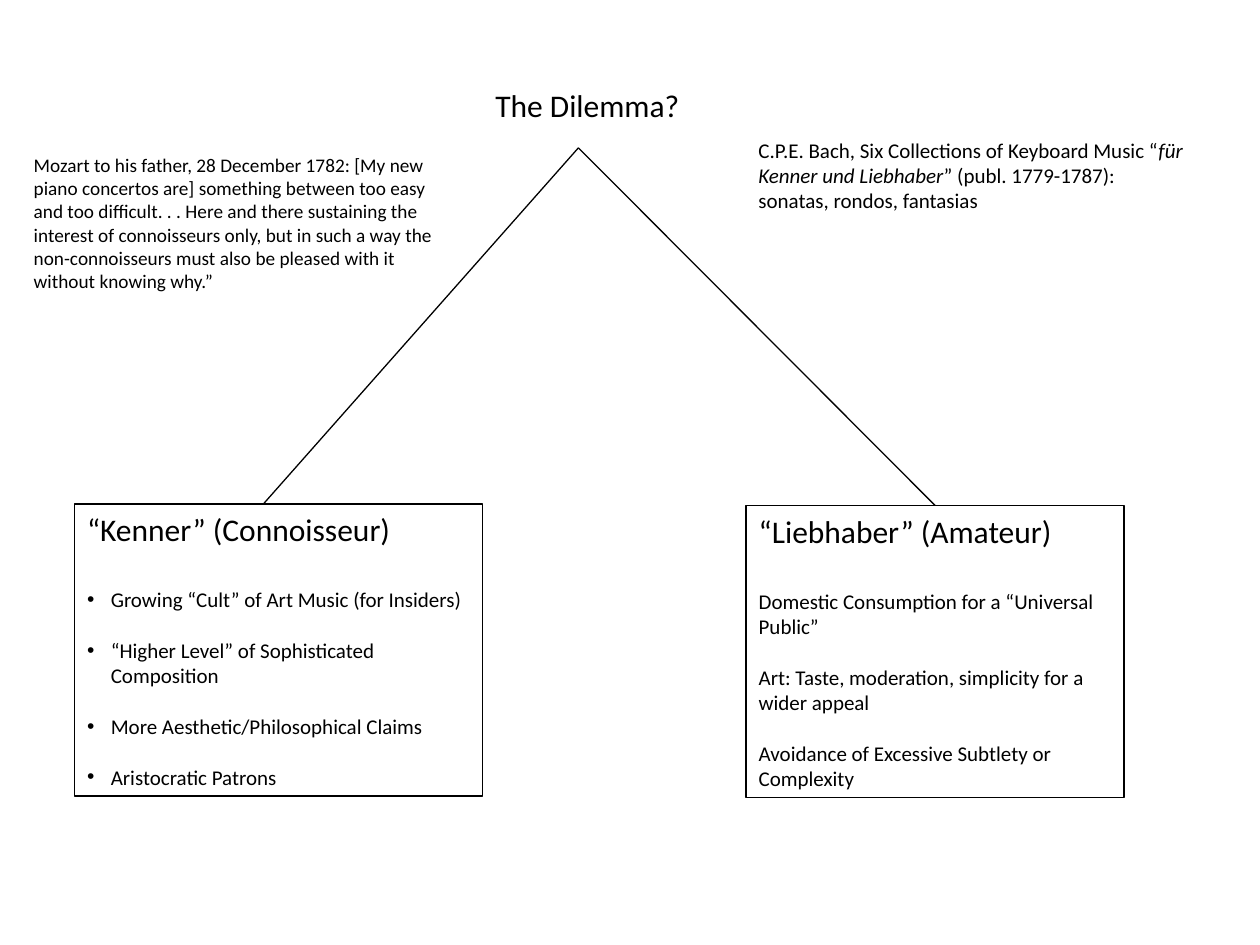
import pptx
import pptx.util
import pptx.dml.color
import pptx.enum.shapes
import pptx.enum.text
import pptx.oxml.ns
import lxml.etree

Cm, Pt = pptx.util.Cm, pptx.util.Pt
BLACK = pptx.dml.color.RGBColor(0, 0, 0)
FONT = "Calibri"
HEADING_SIZE, LIST_SIZE, QUOTE_SIZE = 18, 12, 11
LINE_HEIGHT = 1.22  # one text line, as a multiple of the font size
INDENT = Cm(0.48)

# Content: positions are left, top, width, height in cm
TITLE = ("The Dilemma?", (9.73, 1.6, 4.55, 1.02))
SIDES = [
    {
        "heading": "“Kenner” (Connoisseur)",
        "items": [
            "Growing “Cult” of Art Music (for Insiders)",
            "“Higher Level” of Sophisticated Composition",
            "More Aesthetic/Philosophical Claims",
            "Aristocratic Patrons",
        ],
        "bulleted": True,
        "place": (1.5, 10.16, 8.23, 5.89),
        "outline": 1,
    },
    {
        "heading": "“Liebhaber” (Amateur)",
        "items": [
            "Domestic Consumption for a “Universal Public”",
            "Art: Taste, moderation, simplicity for a wider appeal",
            "Avoidance of Excessive Subtlety or Complexity",
        ],
        "bulleted": False,
        "place": (15.04, 10.19, 7.62, 5.89),
        "outline": 0.75,
    },
]
# Notes: spans of (text, italic), size, place
NOTES = [
    ([("C.P.E. Bach, Six Collections of Keyboard Music “", False),
      ("für Kenner und Liebhaber", True),
      ("” (publ. 1779-1787): sonatas, rondos, fantasias", False)],
     LIST_SIZE, (15.04, 2.64, 9.09, 1.8)),
    ([("Mozart to his father, 28 December 1782: [My new piano concertos are] "
       "something between too easy and too difficult. . . Here and there "
       "sustaining the interest of connoisseurs only, but in such a way the "
       "non-connoisseurs must also be pleased with it without knowing why.”",
       False)],
     QUOTE_SIZE, (0.43, 2.97, 8.56, 3.07)),
]
APEX = (11.66, 2.98)
BRANCH_ENDS = [(5.31, 10.16), (18.85, 10.19)]


def prepare(box, place):
    """Move a text holder and make its frame plain."""
    box.left, box.top, box.width, box.height = map(Cm, place)
    frame = box.text_frame
    frame.word_wrap = True
    frame.auto_size = pptx.enum.text.MSO_AUTO_SIZE.NONE
    frame.vertical_anchor = pptx.enum.text.MSO_ANCHOR.TOP
    return frame


def format_para(para, size, gap=0, bulleted=False):
    para.alignment = pptx.enum.text.PP_ALIGN.LEFT
    para.space_before = Pt(gap)
    properties = para._p.get_or_add_pPr()
    properties.set("marL", str(INDENT if bulleted else 0))
    properties.set("indent", str(-INDENT if bulleted else 0))
    kind = "a:buChar" if bulleted else "a:buNone"
    bullet = lxml.etree.SubElement(properties, pptx.oxml.ns.qn(kind))
    if bulleted:
        bullet.set("char", "•")
    para.font.name = FONT
    para.font.size = Pt(size)
    para.font.color.rgb = BLACK


deck = pptx.Presentation()
deck.slide_width, deck.slide_height = Cm(25.4), Cm(19.05)
page = deck.slides.add_slide(deck.slide_layouts.get_by_name("Two Content"))
title, *bodies = page.placeholders

# Branches from the title to the two sides
for end in BRANCH_ENDS:
    branch = page.shapes.add_connector(
        pptx.enum.shapes.MSO_CONNECTOR.STRAIGHT, *map(Cm, APEX + end))
    branch.line.color.rgb = BLACK
    branch.line.width = Pt(0.75)
    lxml.etree.SubElement(branch._element.spPr, pptx.oxml.ns.qn("a:effectLst"))

# Title
title_text, title_place = TITLE
frame = prepare(title, title_place)
frame.text = title_text
format_para(frame.paragraphs[0], HEADING_SIZE)

# Two outlined lists, each under its heading
for body, side in zip(bodies, SIDES):
    frame = prepare(body, side["place"])
    body.line.color.rgb = BLACK
    body.line.width = Pt(side["outline"])
    frame.text = side["heading"]
    format_para(frame.paragraphs[0], HEADING_SIZE)
    gap_size = HEADING_SIZE
    for item in side["items"]:
        para = frame.add_paragraph()
        para.text = item
        format_para(para, LIST_SIZE, gap_size * LINE_HEIGHT, side["bulleted"])
        gap_size = LIST_SIZE

# Notes beside the title
for spans, size, place in NOTES:
    note = page.shapes.add_textbox(*map(Cm, place))
    para = prepare(note, place).paragraphs[0]
    for text, italic in spans:
        span = para.add_run()
        span.text = text
        if italic:
            span.font.italic = True
    format_para(para, size)

deck.save("out.pptx")
